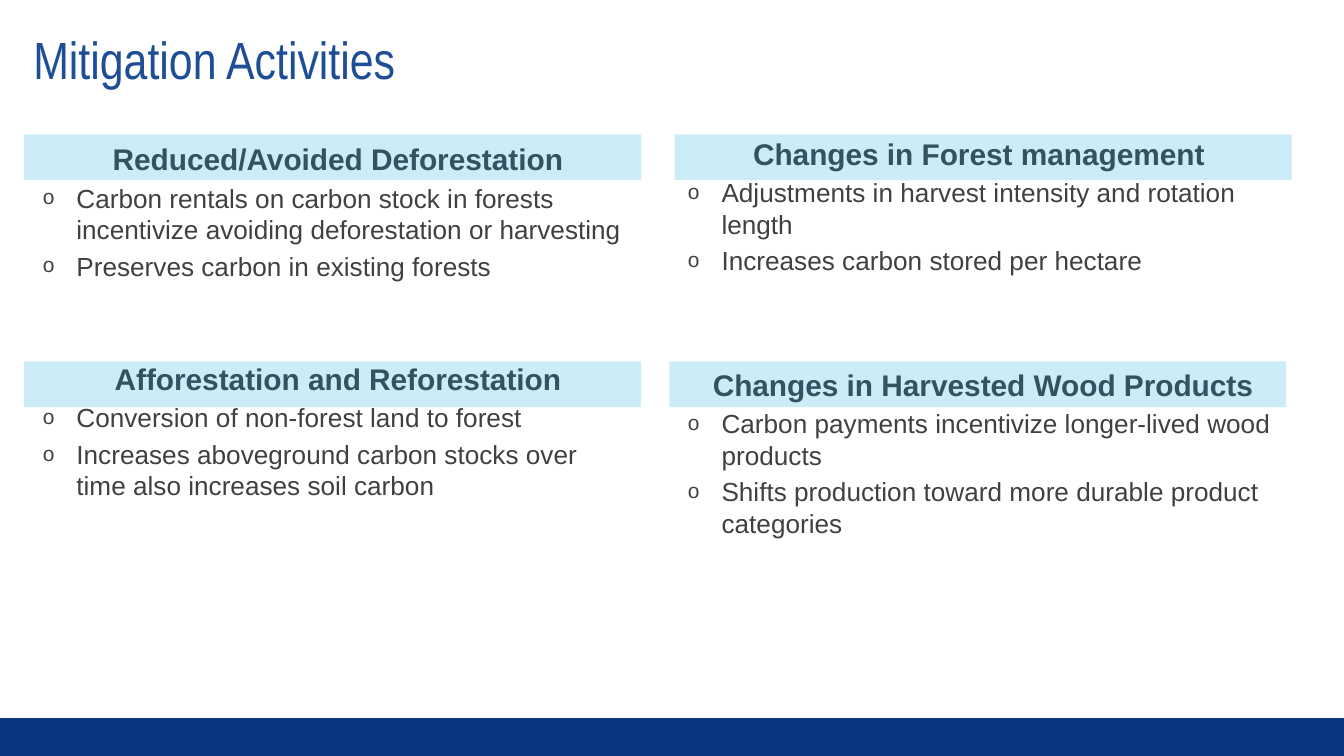
from dataclasses import dataclass

from lxml import etree
from pptx import Presentation
from pptx import util as u
from pptx.dml import color
from pptx.enum import shapes, text
from pptx.oxml import ns

WIDTH = 10
HEIGHT = WIDTH * 9 / 16
COLORS = {"footer": "0A357E", "title": "1E4E96", "body": "404040", "band": "00A3E0"}
COLUMN_WIDTH = 4.59
BAND_HEIGHT = 0.34
BAND_ROWS = (1, 2.69)


@dataclass
class Topic:
    heading: str
    bullets: tuple[str, ...]


@dataclass
class Column:
    left: float
    top: float
    band_lefts: tuple[float, float]
    topic_gap: float  # points above the second heading
    topics: tuple[Topic, Topic]


COLUMNS = (
    Column(5.02, 0.96, (5.02, 4.98), 48.5, (
        Topic("Changes in Forest management ", (
            "Adjustments in harvest intensity and rotation length",
            "Increases carbon stored per hectare")),
        Topic("Changes in Harvested Wood Products", (
            "Carbon payments incentivize longer-lived wood products",
            "Shifts production toward more durable product categories")))),
    Column(0.22, 1, (0.18, 0.18), 42.5, (
        Topic("Reduced/Avoided Deforestation", (
            "Carbon rentals on carbon stock in forests incentivize avoiding "
            "deforestation or harvesting",
            "Preserves carbon in existing forests")),
        Topic("Afforestation and Reforestation", (
            "Conversion of non-forest land to forest",
            "Increases aboveground carbon stocks over time also increases soil carbon")))),
)


def add_band(slide, left: float, top: float, width: float, height: float,
             fill: str, opacity: int = 100) -> None:
    shape = slide.shapes.add_shape(
        shapes.MSO_SHAPE.RECTANGLE, *map(u.Inches, (left, top, width, height)))
    shape.shadow.inherit = False
    shape.line.fill.background()
    shape.fill.solid()
    shape.fill.fore_color.rgb = color.RGBColor.from_string(COLORS[fill])
    if opacity < 100:
        rgb = shape.fill._xPr.find(".//" + ns.qn("a:srgbClr"))
        etree.SubElement(rgb, ns.qn("a:alpha"), val=str(opacity * 1000))


def add_frame(slide, left: float, top: float, width: float, height: float):
    frame = slide.shapes.add_textbox(
        *map(u.Inches, (left, top, width, height))).text_frame
    frame.word_wrap = True
    return frame


def write(paragraph, words: str, *, size: float, ink: str = "body", name: str = "Arial",
          bold: bool = False, align=text.PP_ALIGN.LEFT, before: float = 0,
          spacing: float = 1.0, bullet: bool = False) -> None:
    if bullet:
        properties = paragraph._p.get_or_add_pPr()
        indent = u.Inches(0.25)
        properties.set("marL", str(indent))
        properties.set("indent", str(-indent))
        for tag, attribute, value in (("a:buSzPct", "val", "80000"),
                                      ("a:buFont", "typeface", "Arial"),
                                      ("a:buChar", "char", "o")):
            etree.SubElement(properties, ns.qn(tag)).set(attribute, value)
    paragraph.alignment = align
    paragraph.line_spacing = spacing
    paragraph.space_before = u.Pt(before)
    run = paragraph.add_run()
    run.text = words
    run.font.name, run.font.size, run.font.bold = name, u.Pt(size), bold
    run.font.color.rgb = color.RGBColor.from_string(COLORS[ink])


def add_column(slide, column: Column) -> None:
    frame = add_frame(slide, column.left, column.top, COLUMN_WIDTH, 4.15)
    for index, topic in enumerate(column.topics):
        paragraph = frame.add_paragraph() if index else frame.paragraphs[0]
        write(paragraph, topic.heading, size=16, bold=True,
              align=text.PP_ALIGN.CENTER, before=column.topic_gap * index)
        for line in topic.bullets:
            write(frame.add_paragraph(), line, size=14, before=2.8, bullet=True)


def add_title(slide, words: str) -> None:
    frame = add_frame(slide, 0.15, 0.15, 9.67, 0.63)
    frame.vertical_anchor = text.MSO_ANCHOR.MIDDLE
    frame.margin_left = frame.margin_top = frame.margin_bottom = u.Inches(0.1)
    frame.margin_right = u.Inches(0.2)
    write(frame.paragraphs[0], words, size=28, ink="title", name="Arial Narrow", spacing=0.9)


def main() -> None:
    presentation = Presentation()
    presentation.slide_width = u.Inches(WIDTH)
    presentation.slide_height = u.Inches(HEIGHT)
    slide = presentation.slides.add_slide(presentation.slide_layouts[6])
    footer_height = 0.05 * HEIGHT
    add_band(slide, 0, HEIGHT - footer_height, WIDTH, footer_height, "footer")
    for column in COLUMNS:
        add_column(slide, column)
    for column in COLUMNS:
        for left, top in zip(column.band_lefts, BAND_ROWS):
            add_band(slide, left, top, COLUMN_WIDTH, BAND_HEIGHT, "band", opacity=20)
    add_title(slide, "Mitigation Activities")
    presentation.save("out.pptx")


if __name__ == "__main__":
    main()
